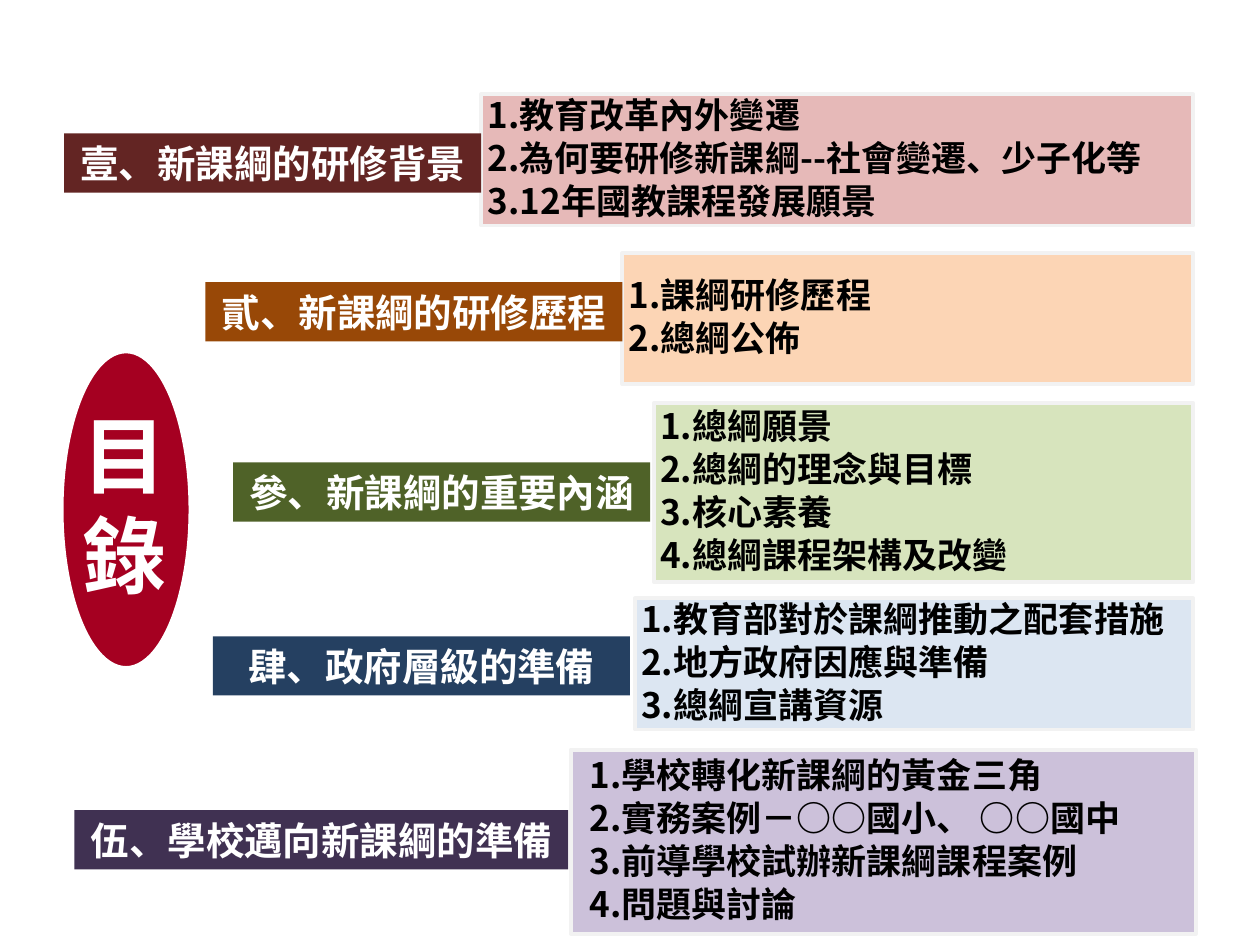
from lxml import etree
from pptx import Presentation
from pptx.dml.color import RGBColor
from pptx.enum.shapes import MSO_SHAPE
from pptx.enum.text import MSO_ANCHOR, PP_ALIGN
from pptx.oxml.ns import qn
from pptx.util import Inches, Pt

RECTANGLE, OVAL = MSO_SHAPE.RECTANGLE, MSO_SHAPE.OVAL
MIDDLE = MSO_ANCHOR.MIDDLE
LEFT, CENTER = PP_ALIGN.LEFT, PP_ALIGN.CENTER
FONT = "Noto Sans CJK SC"
BLACK = RGBColor(0x00, 0x00, 0x00)
WHITE = RGBColor(0xFF, 0xFF, 0xFF)
BORDER = RGBColor(0xF2, 0xF2, 0xF2)
CRIMSON = RGBColor(0xA5, 0x00, 0x21)
MAROON, PINK = RGBColor(0x63, 0x25, 0x23), RGBColor(0xE6, 0xB9, 0xB8)
BROWN, PEACH = RGBColor(0x98, 0x48, 0x07), RGBColor(0xFC, 0xD5, 0xB5)
GREEN, LIME = RGBColor(0x4F, 0x62, 0x28), RGBColor(0xD7, 0xE4, 0xBD)
NAVY, SKY = RGBColor(0x25, 0x40, 0x61), RGBColor(0xDC, 0xE6, 0xF2)
PURPLE, LILAC = RGBColor(0x40, 0x31, 0x52), RGBColor(0xCC, 0xC1, 0xDA)

TITLE = ["目", "錄"]
LABEL_HEIGHT = 0.47

# label, its colour, (left, top, width); items, their colour, box, side inset
SECTIONS = [
    ("壹、新課綱的研修背景", MAROON, (0.51, 1.06, 3.31),
     ["教育改革內外變遷", "為何要研修新課綱--社會變遷、少子化等", "12年國教課程發展願景"],
     PINK, (3.82, 0.75, 5.65, 1.04), 0),
    ("貳、新課綱的研修歷程", BROWN, (1.63, 2.24, 3.31),
     ["課綱研修歷程", "總綱公佈"],
     PEACH, (4.94, 2.01, 4.53, 1.04), 0),
    ("參、新課綱的重要內涵", GREEN, (1.85, 3.67, 3.31),
     ["總綱願景", "總綱的理念與目標", "核心素養", "總綱課程架構及改變"],
     LIME, (5.19, 3.2, 4.28, 1.42), 0),
    ("肆、政府層級的準備", NAVY, (1.69, 5.05, 3.31),
     ["教育部對於課綱推動之配套措施", "地方政府因應與準備", "總綱宣講資源"],
     SKY, (5.04, 4.75, 4.43, 1.04), 0),
    ("伍、學校邁向新課綱的準備", PURPLE, (0.59, 6.43, 3.92),
     ["學校轉化新課綱的黃金三角", "實務案例－○○國小、 ○○國中", "前導學校試辦新課綱課程案例", "問題與討論"],
     LILAC, (4.53, 5.95, 4.96, 1.46), 0.1),
]


def add_block(slide, kind, box, fill, line=None, line_width=0):
    shape = slide.shapes.add_shape(kind, *map(Inches, box))
    shape.shadow.inherit = False
    shape.fill.solid()
    shape.fill.fore_color.rgb = fill
    if line is None:
        shape.line.fill.background()
    else:
        shape.line.color.rgb = line
        shape.line.width = Pt(line_width)
    return shape


def write(text_frame, lines, size, color, alignment):
    text_frame.word_wrap = True
    text_frame.text = "\n".join(lines)
    for paragraph in text_frame.paragraphs:
        paragraph.alignment = alignment
        for run in paragraph.runs:
            run.font.name = FONT
            run.font.size = Pt(size)
            run.font.bold = True
            run.font.color.rgb = color
            east_asian = etree.SubElement(run.font._element, qn("a:ea"))
            east_asian.set("typeface", FONT)


def number(paragraph):
    """Turn a paragraph into an item of a numbered list."""
    paragraph.level = 1
    paragraph.line_spacing = 0.9
    paragraph.space_after = Pt(3)
    properties = paragraph._p.get_or_add_pPr()
    properties.set("marL", str(Inches(0.29)))
    properties.set("indent", str(Inches(-0.24)))
    numbering = etree.SubElement(properties, qn("a:buAutoNum"))
    numbering.set("type", "arabicPeriod")


def add_items(slide, items, fill, box, inset):
    shape = add_block(slide, RECTANGLE, box, fill, BORDER, 2.25)
    text_frame = shape.text_frame
    text_frame.vertical_anchor = MIDDLE
    text_frame.margin_left = text_frame.margin_right = Inches(inset)
    text_frame.margin_top = text_frame.margin_bottom = Inches(inset / 2)
    write(text_frame, items, 20, BLACK, LEFT)
    for paragraph in text_frame.paragraphs:
        number(paragraph)


def add_label(slide, label, fill, place):
    shape = add_block(slide, RECTANGLE, (*place, LABEL_HEIGHT), fill)
    shape.text_frame.vertical_anchor = MIDDLE
    write(shape.text_frame, [label], 22, WHITE, CENTER)


def add_title(slide):
    add_block(slide, OVAL, (0.49, 2.79, 1.02, 2.51), CRIMSON, WHITE, 2)
    text_box = slide.shapes.add_textbox(*map(Inches, (0.24, 3.15, 1.5, 1.72)))
    write(text_box.text_frame, TITLE, 48, WHITE, CENTER)


def main():
    presentation = Presentation()
    presentation.slide_width, presentation.slide_height = Inches(10), Inches(7.5)
    slide = presentation.slides.add_slide(presentation.slide_layouts[6])
    for _, _, _, items, fill, box, inset in SECTIONS:
        add_items(slide, items, fill, box, inset)
    add_title(slide)
    for label, fill, place, *_ in SECTIONS:
        add_label(slide, label, fill, place)
    presentation.save("out.pptx")


if __name__ == "__main__":
    main()
